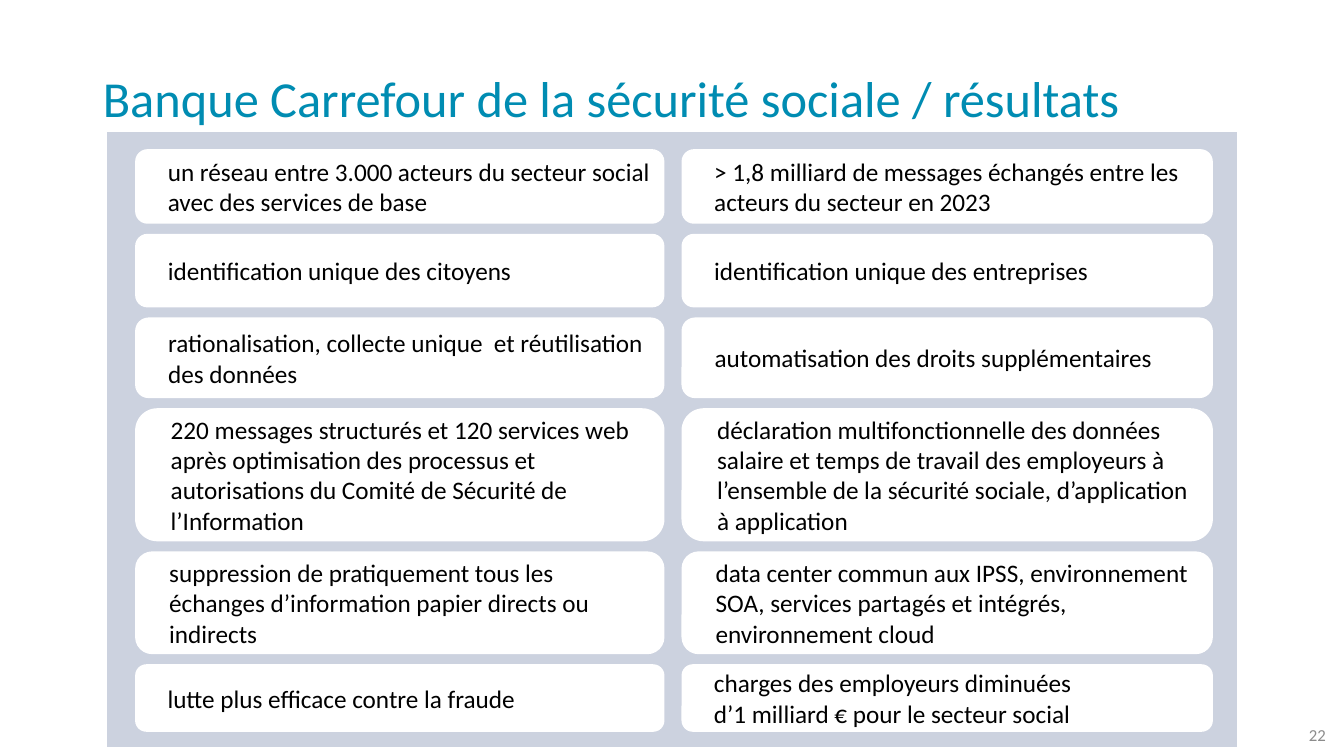
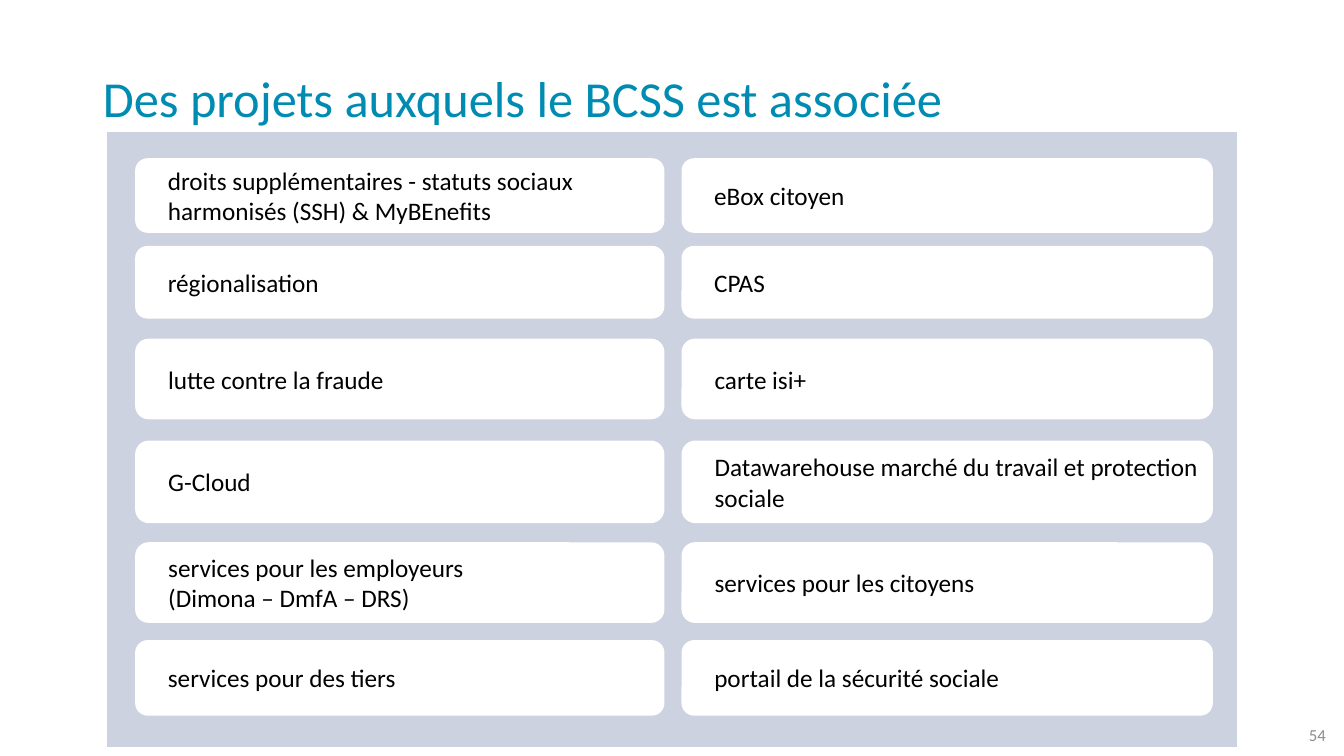
from lxml import etree
from pptx import Presentation
from pptx.dml.color import RGBColor
from pptx.enum import shapes, text
from pptx.oxml.ns import qn
from pptx.util import Inches, Pt

FONT = "Calibri"
TEAL, NAVY, WHITE, BLACK, GREY = "008CB2", "002060", "FFFFFF", "000000", "8C8C8C"
COLUMNS = [(1.34, 5.25), (6.76, 5.27)]  # left, width

# Each row: top, height, left card, right card
SLIDES = [
    {
        "title": "Banque Carrefour de la sécurité sociale / résultats",
        "number": "22",
        "rows": [
            (1.48, 0.74,
             "un réseau entre 3.000 acteurs du secteur social avec des services de base",
             "> 1,8 milliard de messages échangés entre les acteurs du secteur en 2023"),
            (2.32, 0.73,
             "identification unique des citoyens",
             "identification unique des entreprises"),
            (3.15, 0.8,
             "rationalisation, collecte unique  et réutilisation des données",
             "automatisation des droits supplémentaires"),
            (4.05, 1.32,
             "220 messages structurés et 120 services web après optimisation des "
             "processus et autorisations du Comité de Sécurité de l’Information",
             "déclaration multifonctionnelle des données salaire et temps de travail des "
             "employeurs à l’ensemble de la sécurité sociale, d’application à application"),
            (5.47, 1.02,
             "suppression de pratiquement tous les échanges d’information papier "
             "directs ou indirects",
             "data center commun aux IPSS, environnement SOA, services partagés et "
             "intégrés, environnement cloud"),
            (6.59, 0.67,
             "lutte plus efficace contre la fraude",
             "charges des employeurs diminuées\nd’1 milliard € pour le secteur social"),
        ],
    },
    {
        "title": "Des projets auxquels le BCSS est associée",
        "number": "54",
        "rows": [
            (1.57, 0.74,
             "droits supplémentaires - statuts sociaux harmonisés (SSH) & MyBEnefits",
             "eBox citoyen"),
            (2.44, 0.72, "régionalisation", "CPAS"),
            (3.36, 0.8, "lutte contre la fraude", "carte isi+"),
            (4.37, 0.82, "G-Cloud",
             "Datawarehouse marché du travail et protection sociale"),
            (5.38, 0.8, "services pour les employeurs\v(Dimona – DmfA – DRS)",
             "services pour les citoyens"),
            (6.35, 0.75, "services pour des tiers", "portail de la sécurité sociale"),
        ],
    },
]


def rgb(value):
    return RGBColor.from_string(value)


def write(sp, content, size, color, align=text.PP_ALIGN.LEFT, spacing=1.0, indent=None):
    """Fill a shape with text; a newline starts a paragraph, \\v breaks a line."""
    tf = sp.text_frame
    tf.text = content
    tf.word_wrap = True
    tf.auto_size = text.MSO_AUTO_SIZE.NONE
    tf.vertical_anchor = text.MSO_ANCHOR.MIDDLE
    for p in tf.paragraphs:
        p.alignment = align
        p.line_spacing = spacing
        if indent is not None:
            p.level = 1
            pPr = p._p.get_or_add_pPr()
            pPr.set("marL", str(Inches(indent)))
            pPr.set("indent", "0")
        for r in p.runs:
            r.font.name = FONT
            r.font.size = Pt(size)
            r.font.color.rgb = rgb(color)


def add_box(slide, kind, box, fill, line=None, alpha=None):
    sp = slide.shapes.add_shape(kind, *map(Inches, box))
    sp.shadow.inherit = False
    sp.fill.solid()
    sp.fill.fore_color.rgb = rgb(fill)
    if alpha is not None:
        clr = sp.fill._xPr.find(qn("a:solidFill"))[0]
        etree.SubElement(clr, qn("a:alpha")).set("val", str(alpha * 1000))
    if line:
        sp.line.color.rgb = rgb(line)
        sp.line.width = Pt(1)
    else:
        sp.line.fill.background()
    return sp


def add_frame(slide, title, number):
    """Add what every slide shares: title, page number, strip and panel."""
    sp = slide.shapes.add_textbox(*map(Inches, (12.43, 7.09, 0.82, 0.4)))
    write(sp, number, 12, GREY, align=text.PP_ALIGN.RIGHT)
    rect = shapes.MSO_SHAPE.RECTANGLE
    add_box(slide, rect, (1.05, 7.33, 11.16, 0.17), WHITE)
    add_box(slide, rect, (1.05, 1.3, 11.23, 6.12), NAVY, line=WHITE, alpha=20)
    sp = slide.shapes.title
    sp.left, sp.top, sp.width, sp.height = map(Inches, (0.92, 0.28, 11.5, 1.45))
    write(sp, title, 36, TEAL, spacing=0.9)
    slide.shapes._spTree.append(sp._element)


def add_cards(slide, rows):
    for top, height, *cards in rows:
        for (left, width), content in zip(COLUMNS, cards):
            sp = add_box(slide, shapes.MSO_SHAPE.ROUNDED_RECTANGLE,
                         (left, top, width, height), WHITE)
            write(sp, content, 18, BLACK, indent=0.19)


def main():
    prs = Presentation()
    prs.slide_width, prs.slide_height = Inches(13.33), Inches(7.5)
    for data in SLIDES:
        slide = prs.slides.add_slide(prs.slide_layouts[5])
        add_frame(slide, data["title"], data["number"])
        add_cards(slide, data["rows"])
    prs.save("out.pptx")


if __name__ == "__main__":
    main()
